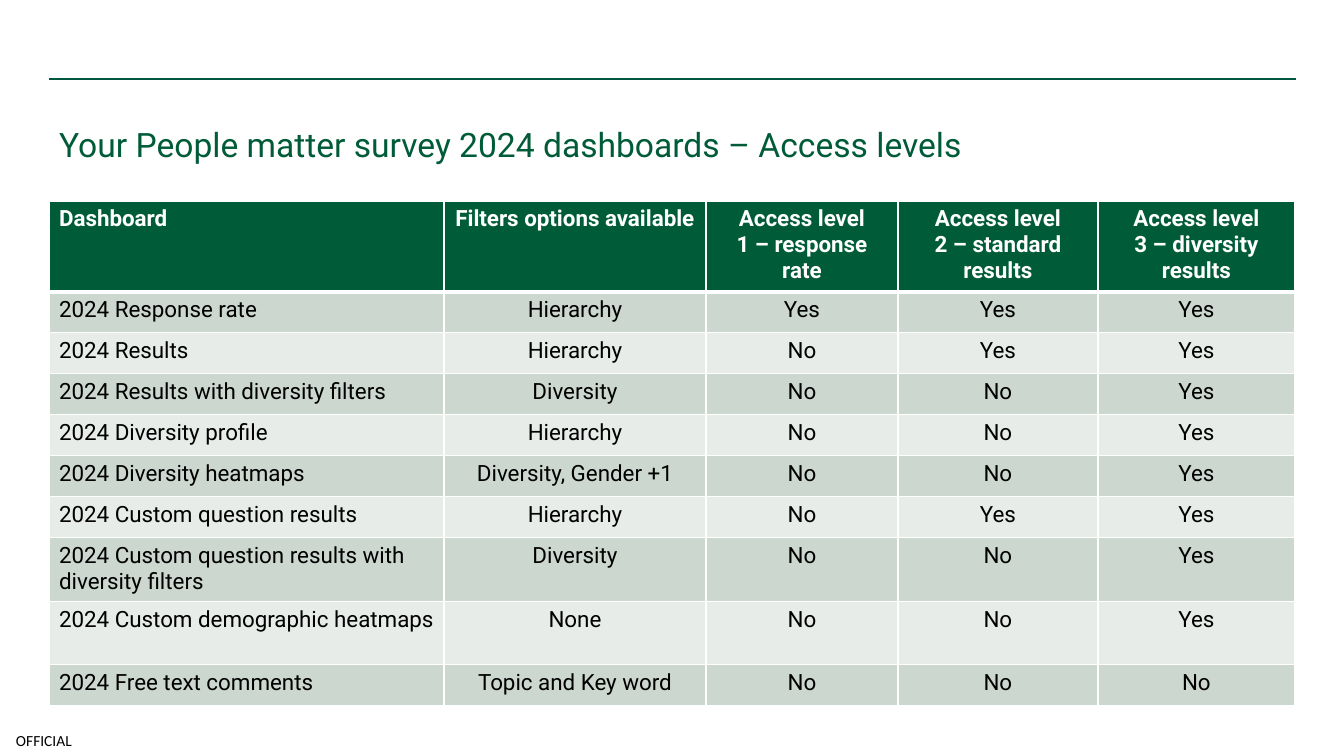
import lxml.etree
import pptx
import pptx.dml.color
import pptx.enum.shapes
import pptx.enum.text
import pptx.oxml.ns
import pptx.util

PX = 914400 / 100.8
GREEN = pptx.dml.color.RGBColor(0x00, 0x5C, 0x38)
RULE_GREEN = pptx.dml.color.RGBColor(0x00, 0x57, 0x3F)
DARK_BAND = pptx.dml.color.RGBColor(0xCC, 0xD7, 0xD0)
LIGHT_BAND = pptx.dml.color.RGBColor(0xE7, 0xEC, 0xE9)
WHITE = pptx.dml.color.RGBColor(0xFF, 0xFF, 0xFF)
BLACK = pptx.dml.color.RGBColor(0x00, 0x00, 0x00)
CENTER = pptx.enum.text.PP_ALIGN.CENTER
LEFT = pptx.enum.text.PP_ALIGN.LEFT
MIDDLE = pptx.enum.text.MSO_ANCHOR.MIDDLE

COL_WIDTHS = [395, 262, 192, 200, 197]
ROW_HEIGHTS = [90] + [41] * 6 + [64, 63, 41]
ROWS = [
    ["Dashboard", "Filters options available", "Access level\n1 – response rate",
     "Access level\n2 – standard results", "Access level\n3 – diversity results"],
    ["2024 Response rate", "Hierarchy", "Yes", "Yes", "Yes"],
    ["2024 Results", "Hierarchy", "No", "Yes", "Yes"],
    ["2024 Results with diversity filters", "Diversity", "No", "No", "Yes"],
    ["2024 Diversity profile", "Hierarchy", "No", "No", "Yes"],
    ["2024 Diversity heatmaps", "Diversity, Gender +1", "No", "No", "Yes"],
    ["2024 Custom question results", "Hierarchy", "No", "Yes", "Yes"],
    ["2024 Custom question results with diversity filters", "Diversity", "No", "No", "Yes"],
    ["2024 Custom demographic heatmaps", "None", "No", "No", "Yes"],
    ["2024 Free text comments", "Topic and Key word", "No", "No", "No"],
]


def px(n):
    return pptx.util.Emu(round(n * PX))


def style(p, font, size, color, bold=False):
    for r in p.runs:
        r.font.name = font
        r.font.size = pptx.util.Pt(size)
        r.font.color.rgb = color
        r.font.bold = bold


qn = pptx.oxml.ns.qn
prs = pptx.Presentation()
prs.slide_width, prs.slide_height = px(1344), px(756)
s = prs.slides.add_slide(prs.slide_layouts[5])

rule = s.shapes.add_connector(
    pptx.enum.shapes.MSO_CONNECTOR.STRAIGHT, px(49), px(79), px(1296), px(79))
rule.line.color.rgb = RULE_GREEN
rule.line.width = pptx.util.Pt(1)
lxml.etree.SubElement(rule._element.spPr, qn("a:effectLst"))

marking = s.shapes.add_textbox(px(0), px(725), px(88), px(31))
tf = marking.text_frame
tf.margin_left = px(16)
tf.margin_right = tf.margin_top = tf.margin_bottom = 0
tf.vertical_anchor = MIDDLE
tf.text = "OFFICIAL"
style(tf.paragraphs[0], "Calibri", 11, BLACK)

title = s.shapes.title
title.left, title.top, title.width, title.height = px(49), px(90), px(1125), px(101)
tf = title.text_frame
tf.text = "Your People matter survey 2024 dashboards – Access levels"
tf.vertical_anchor = MIDDLE
p = tf.paragraphs[0]
p.alignment = LEFT
p.line_spacing = 1.2
style(p, "Roboto", 24, GREEN)

table = s.shapes.add_table(
    len(ROWS), len(COL_WIDTHS), px(49), px(201),
    px(sum(COL_WIDTHS)), px(sum(ROW_HEIGHTS))).table
for col, width in zip(table.columns, COL_WIDTHS):
    col.width = px(width)

for i, texts in enumerate(ROWS):
    table.rows[i].height = px(ROW_HEIGHTS[i])
    header = i == 0
    for j, text in enumerate(texts):
        cell = table.cell(i, j)
        cell.text_frame.text = text
        for p in cell.text_frame.paragraphs:
            p.alignment = CENTER if j else LEFT
            style(p, "Roboto", 16, WHITE if header else BLACK, header)
        tcPr = cell._tc.get_or_add_tcPr()
        for side in ("L", "R", "T", "B"):
            thick = (i, side) in ((0, "B"), (1, "T"))
            ln = lxml.etree.SubElement(
                tcPr, qn("a:ln" + side), w=str(pptx.util.Pt(3 if thick else 1)))
            fill = lxml.etree.SubElement(ln, qn("a:solidFill"))
            lxml.etree.SubElement(fill, qn("a:srgbClr"), val=str(WHITE))
        cell.fill.solid()
        cell.fill.fore_color.rgb = GREEN if header else DARK_BAND if i % 2 else LIGHT_BAND

prs.save("out.pptx")
